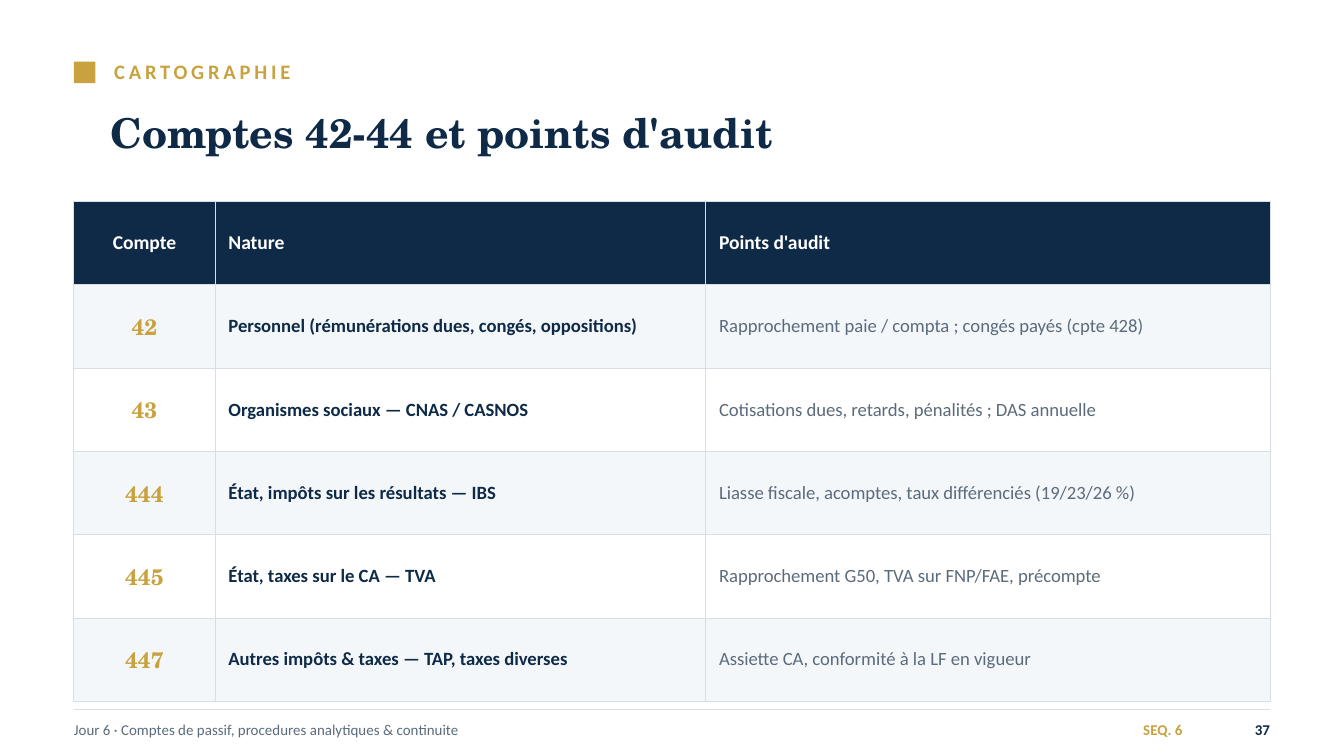
from dataclasses import dataclass

import pptx
import pptx.dml.color
import pptx.enum.shapes
import pptx.enum.text
import pptx.oxml
import pptx.oxml.ns
import pptx.util

RGB = pptx.dml.color.RGBColor
ALIGN = pptx.enum.text.PP_ALIGN
MIDDLE = pptx.enum.text.MSO_ANCHOR.MIDDLE

PX = 914400 // 200  # 200 px to the inch

NAVY = RGB(0x0E, 0x2A, 0x47)
GOLD = RGB(0xC9, 0xA2, 0x3F)
GREY = RGB(0x5B, 0x6B, 0x7B)
RULE = RGB(0xD7, 0xDE, 0xE6)
PALE = RGB(0xF4, 0xF7, 0xFA)
WHITE = RGB(0xFF, 0xFF, 0xFF)

SANS = "Calibri"
SERIF = "TeX Gyre Schola"

LEFT, RIGHT = 110, 1890
ROW = 124


@dataclass(frozen=True)
class Box:
    x: int
    y: int
    w: int
    h: int

    def emu(self) -> tuple[int, int, int, int]:
        return self.x * PX, self.y * PX, self.w * PX, self.h * PX


@dataclass(frozen=True)
class Label:
    box: Box
    text: str
    color: RGB
    size: float = 8
    bold: bool = True
    align: ALIGN = ALIGN.LEFT
    space: int = 0


@dataclass(frozen=True)
class Column:
    head: str
    width: int
    color: RGB
    size: float = 10
    font: str = SANS
    bold: bool = True
    align: ALIGN = ALIGN.LEFT


LABELS = [
    Label(Box(170, 80, 1720, 52), "CARTOGRAPHIE", GOLD, size=11, space=2),
    Label(Box(LEFT, 1060, 1280, 50),
          "Jour 6 · Comptes de passif, procedures analytiques & continuite",
          GREY, bold=False),
    Label(Box(1380, 1060, 380, 50), "SEQ. 6", GOLD, align=ALIGN.RIGHT),
    Label(Box(1800, 1060, 90, 50), "37", NAVY, align=ALIGN.RIGHT),
]

COLUMNS = [
    Column("Compte", 210, GOLD, size=12, font=SERIF, align=ALIGN.CENTER),
    Column("Nature", 730, NAVY),
    Column("Points d'audit", 840, GREY, bold=False),
]

ROWS = [
    ("42", "Personnel (rémunérations dues, congés, oppositions)",
     "Rapprochement paie / compta ; congés payés (cpte 428)"),
    ("43", "Organismes sociaux — CNAS / CASNOS",
     "Cotisations dues, retards, pénalités ; DAS annuelle"),
    ("444", "État, impôts sur les résultats — IBS",
     "Liasse fiscale, acomptes, taux différenciés (19/23/26 %)"),
    ("445", "État, taxes sur le CA — TVA",
     "Rapprochement G50, TVA sur FNP/FAE, précompte"),
    ("447", "Autres impôts & taxes — TAP, taxes diverses",
     "Assiette CA, conformité à la LF en vigueur"),
]


def write(frame, text: str, *, color: RGB, size: float, font: str = SANS,
          bold: bool = True, align: ALIGN = ALIGN.LEFT, space: int = 0) -> None:
    """Fill a text frame with one formatted run; space is tracking in points."""
    para = frame.paragraphs[0]
    para.alignment = align
    run = para.add_run()
    run.text = text
    run.font.name = font
    run.font.size = pptx.util.Pt(size)
    run.font.bold = bold
    run.font.color.rgb = color
    if space:
        run.font._element.set("spc", str(space * 100))


def set_frame(frame) -> None:
    """Wrap, centre vertically and drop the insets."""
    frame.word_wrap = True
    frame.auto_size = pptx.enum.text.MSO_AUTO_SIZE.NONE
    frame.vertical_anchor = MIDDLE
    frame.margin_left = frame.margin_right = 0
    frame.margin_top = frame.margin_bottom = 0


def add_title(slide, box: Box, text: str) -> None:
    title = slide.shapes.title
    title.left, title.top, title.width, title.height = box.emu()
    set_frame(title.text_frame)
    write(title.text_frame, text, color=NAVY, size=22, font=SERIF)


def add_label(slide, label: Label) -> None:
    frame = slide.shapes.add_textbox(*label.box.emu()).text_frame
    set_frame(frame)
    write(frame, label.text, color=label.color, size=label.size,
          bold=label.bold, align=label.align, space=label.space)


def add_square(slide, box: Box) -> None:
    square = slide.shapes.add_shape(
        pptx.enum.shapes.MSO_SHAPE.RECTANGLE, *box.emu())
    square.shadow.inherit = False
    square.fill.solid()
    square.fill.fore_color.rgb = GOLD
    square.line.fill.background()


def add_rule(slide, y: int) -> None:
    rule = slide.shapes.add_connector(
        pptx.enum.shapes.MSO_CONNECTOR.STRAIGHT,
        LEFT * PX, y * PX, RIGHT * PX, y * PX)
    rule.line.color.rgb = RULE
    rule.line.width = pptx.util.Pt(0.75)
    rule._element.spPr.append(pptx.oxml.parse_xml(
        f'<a:effectLst {pptx.oxml.ns.nsdecls("a")}/>'))


def set_cell(cell, fill: RGB) -> None:
    """Fill a cell and draw its four borders."""
    cell.vertical_anchor = MIDDLE
    cell.fill.solid()
    cell.fill.fore_color.rgb = fill
    props = cell._tc.get_or_add_tcPr()
    for i, side in enumerate("LRTB"):
        props.insert(i, pptx.oxml.parse_xml(
            f'<a:ln{side} {pptx.oxml.ns.nsdecls("a")} w="6350">'
            f'<a:solidFill><a:srgbClr val="{RULE}"/></a:solidFill>'
            f'</a:ln{side}>'))


def add_table(slide, x: int, y: int) -> None:
    width = sum(col.width for col in COLUMNS)
    count = len(ROWS) + 1
    table = slide.shapes.add_table(
        count, len(COLUMNS), *Box(x, y, width, ROW * count).emu()).table
    table.horz_banding = False
    for c, col in enumerate(COLUMNS):
        table.columns[c].width = col.width * PX
        head = table.cell(0, c)
        set_cell(head, NAVY)
        write(head.text_frame, col.head, color=WHITE, size=10.5,
              align=col.align)
        for r, row in enumerate(ROWS, start=1):
            cell = table.cell(r, c)
            set_cell(cell, PALE if r % 2 else WHITE)
            write(cell.text_frame, row[c], color=col.color, size=col.size,
                  font=col.font, bold=col.bold, align=col.align)


def main() -> None:
    deck = pptx.Presentation()
    deck.slide_width, deck.slide_height = 2000 * PX, 1125 * PX
    slide = deck.slides.add_slide(deck.slide_layouts[5])
    add_square(slide, Box(LEFT, 92, 32, 32))
    add_title(slide, Box(164, 130, 1740, 132), "Comptes 42-44 et points d'audit")
    add_rule(slide, 1056)
    for label in LABELS:
        add_label(slide, label)
    add_table(slide, LEFT, 300)
    deck.save("out.pptx")


if __name__ == "__main__":
    main()
